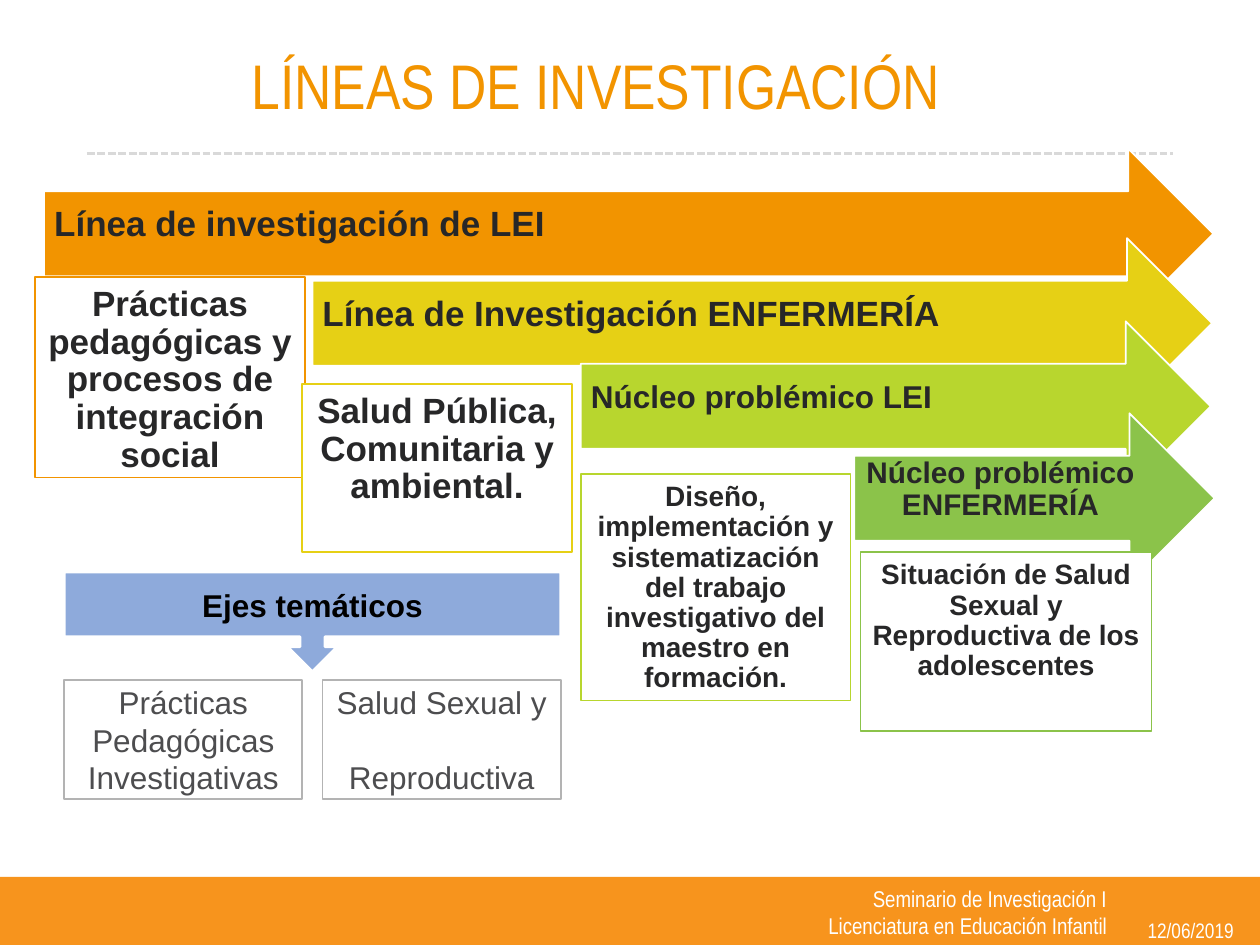
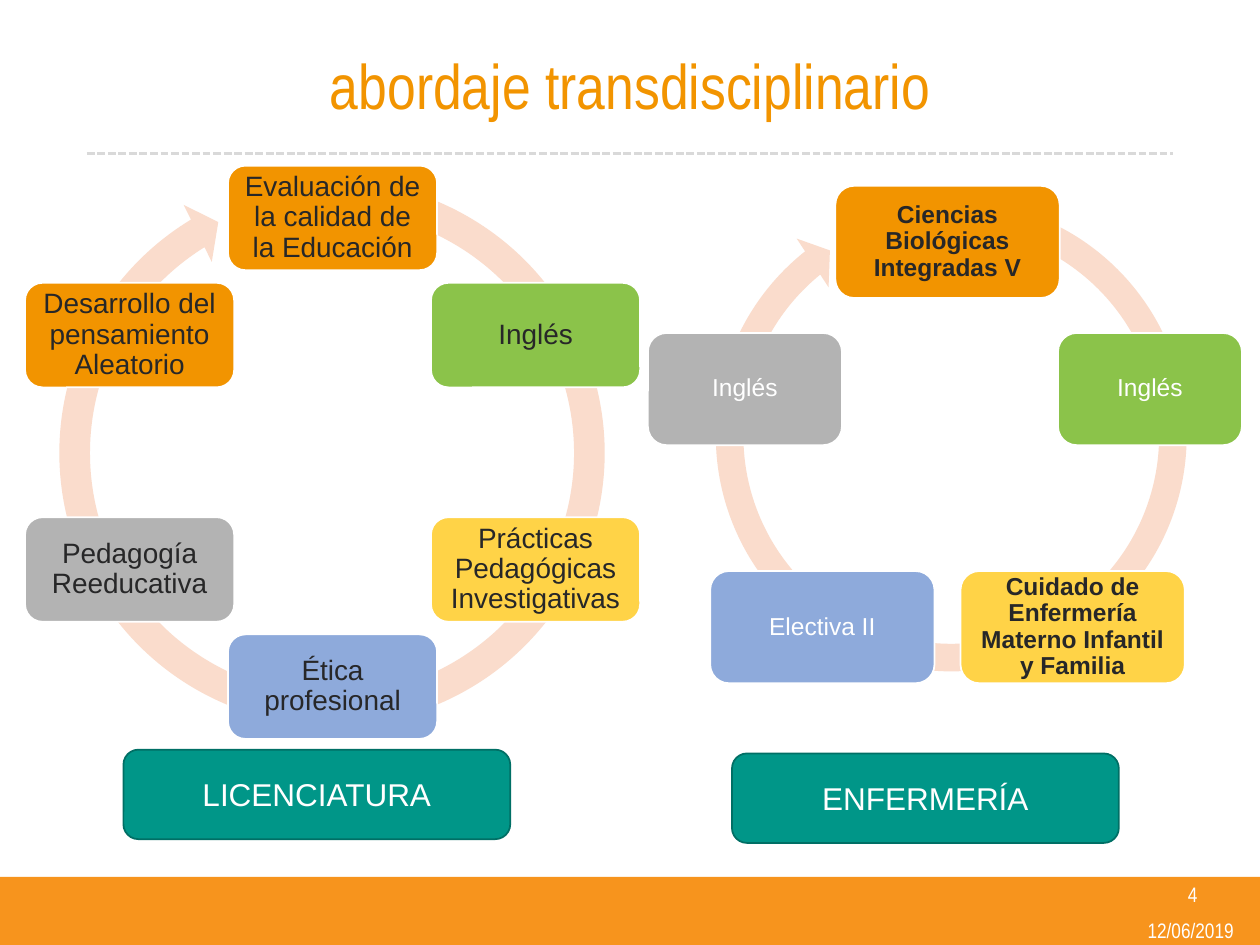
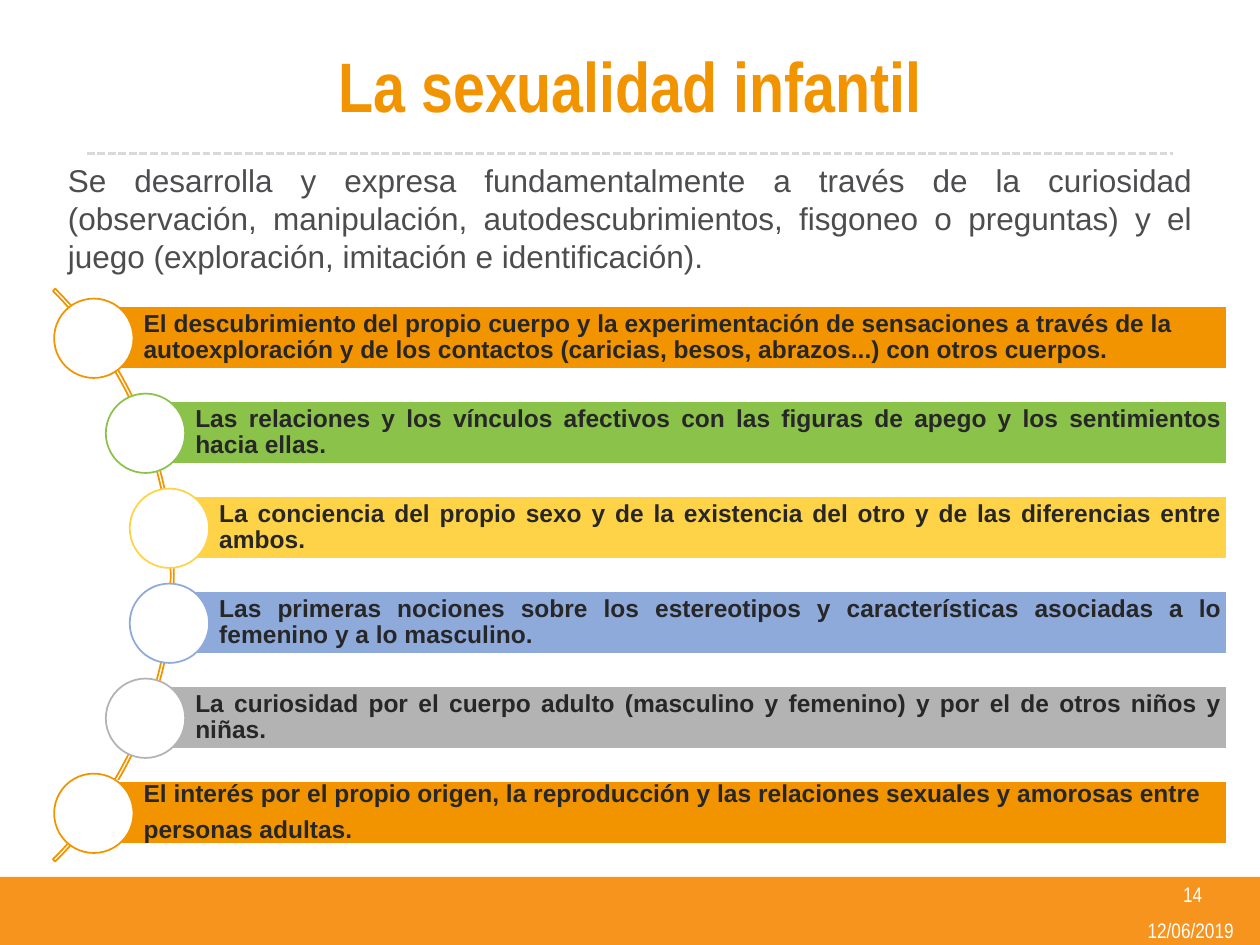
from math import cos, radians, sin

from lxml.etree import SubElement
from pptx import Presentation
from pptx.dml.color import RGBColor
from pptx.enum.dml import MSO_LINE
from pptx.enum.shapes import MSO_CONNECTOR, MSO_SHAPE
from pptx.enum.text import MSO_ANCHOR, PP_ALIGN
from pptx.oxml.ns import qn
from pptx.util import Inches, Pt

ORANGE, BAND, YELLOW, LIME = "F29400", "F7941D", "E6D015", "B8D62E"
GREEN, GOLD, BLUE, GRAY = "8BC34A", "FFD347", "8EAADB", "B3B3B3"
TEAL, DARK_TEAL, PEACH, RULE = "009688", "006F65", "FADCCC", "D9D9D9"
WHITE, BLACK, INK, BODY = "FFFFFF", "000000", "272728", "4D4D4F"
SANS, NARROW = "Arial", "Arial Narrow"
DEFAULT_INSETS = (0.1, 0.05, 0.1, 0.05)
LEFT, CENTER = PP_ALIGN.LEFT, PP_ALIGN.CENTER
RIGHT, JUSTIFY = PP_ALIGN.RIGHT, PP_ALIGN.JUSTIFY


def rgb(value):
    return RGBColor.from_string(value)


def write(shape, paragraphs, size, color, font=SANS, bold=False, align=CENTER,
          anchor=MSO_ANCHOR.MIDDLE, insets=DEFAULT_INSETS, spacing=None, gap=0):
    """Fill a shape with paragraphs; gap is the space in points between them."""
    frame = shape.text_frame
    frame.word_wrap = True
    frame.vertical_anchor = anchor
    frame.margin_left, frame.margin_top, frame.margin_right, frame.margin_bottom = map(Inches, insets)
    for index, text in enumerate(paragraphs):
        paragraph = frame.add_paragraph() if index else frame.paragraphs[0]
        paragraph.alignment = align
        if spacing:
            paragraph.line_spacing = spacing
        if index and gap:
            paragraph.space_before = Pt(gap)
        run = paragraph.add_run()
        run.text = text
        run.font.name = font
        run.font.size = Pt(size)
        run.font.bold = bold
        run.font.color.rgb = rgb(color)


def add_text(slide, box, paragraphs, size, color, **style):
    write(slide.shapes.add_textbox(*map(Inches, box)), paragraphs, size, color, **style)


def add_form(slide, preset, box, fill=None, outline=None, width=1, adjustments=()):
    form = slide.shapes.add_shape(preset, *map(Inches, box))
    form.shadow.inherit = False
    if fill:
        form.fill.solid()
        form.fill.fore_color.rgb = rgb(fill)
    else:
        form.fill.background()
    if outline:
        form.line.color.rgb = rgb(outline)
        form.line.width = Pt(width)
    else:
        form.line.fill.background()
    for index, value in enumerate(adjustments):
        form.adjustments[index] = value
    return form


def add_page(deck, title, title_center=5, title_size=36, title_bold=False, number=None):
    """Add a slide with the footer band, date, dashed rule and title."""
    slide = deck.slides.add_slide(deck.slide_layouts[6])
    add_form(slide, MSO_SHAPE.RECTANGLE, (0, 6.96, 10, 0.54), BAND)
    add_text(slide, (8.92, 7.28, 1.06, 0.21), ["12/06/2019"], 12, WHITE, font=NARROW)
    rule = slide.shapes.add_connector(MSO_CONNECTOR.STRAIGHT, Inches(0.69), Inches(1.22),
                                      Inches(9.31), Inches(1.22))
    rule.line.color.rgb = rgb(RULE)
    rule.line.width = Pt(1.5)
    rule.line.dash_style = MSO_LINE.SQUARE_DOT
    SubElement(rule._element.spPr, qn("a:effectLst"))
    if number:
        add_text(slide, (8.94, 6.95, 1.05, 0.3), [number], 12, WHITE, font=NARROW)
    add_text(slide, (title_center - 4.31, 0.13, 8.62, 1.08), [title], title_size, ORANGE,
             font=NARROW, bold=title_bold)
    return slide


def add_line_arrow(slide, left, top, width, color, text, size, align=LEFT):
    arrow = add_form(slide, MSO_SHAPE.RIGHT_ARROW, (left, top, width, 1.35), color, WHITE)
    write(arrow, [text], size, INK, bold=True, align=align,
          insets=(0.08, 0.08, 0.28, 0.21), spacing=0.9)


def add_line_detail(slide, box, color, text, size):
    detail = add_form(slide, MSO_SHAPE.RECTANGLE, box, WHITE, color)
    write(detail, [text], size, INK, bold=True, anchor=MSO_ANCHOR.TOP,
          insets=(0.07,) * 4, spacing=0.9)


def add_axis(slide, left, paragraphs, gap=0):
    axis = add_form(slide, MSO_SHAPE.RECTANGLE, (left, 5.4, 1.89, 0.94), WHITE, GRAY)
    write(axis, paragraphs, 18, BODY, gap=gap)


def add_course_ring(slide, center, radius, height, size, inset, courses):
    """Place courses clockwise from the top at equal angles."""
    for index, (name, fill, color, bold, width) in enumerate(courses):
        angle = radians(360 * index / len(courses))
        left = center[0] + radius * sin(angle) - width / 2
        top = center[1] - radius * cos(angle) - height / 2
        course = add_form(slide, MSO_SHAPE.ROUNDED_RECTANGLE, (left, top, width, height), fill, WHITE)
        write(course, [name], size, color, bold=bold, insets=(inset,) * 4, spacing=0.9)


def add_program_label(slide, left, top, name):
    label = add_form(slide, MSO_SHAPE.ROUNDED_RECTANGLE, (left, top, 3.07, 0.71), TEAL, DARK_TEAL)
    write(label, [name], 18, WHITE)


def add_trait(slide, left, top, color, paragraphs, align):
    bar = add_form(slide, MSO_SHAPE.RECTANGLE, (left, top, 9.74 - left, 0.5), color, WHITE)
    write(bar, paragraphs, 14, INK, bold=True, align=align,
          insets=(0.4, 0.04, 0.04, 0.04), spacing=0.9, gap=5)
    add_form(slide, MSO_SHAPE.OVAL, (left - 0.31, top - 0.06, 0.63, 0.63), WHITE, color)


def build_research_lines(deck):
    slide = add_page(deck, "LÍNEAS DE INVESTIGACIÓN", title_center=4.73)
    add_text(slide, (4.78, 6.97, 4.1, 0.53),
             ["Seminario de Investigación I", "Licenciatura en Educación Infantil"],
             13, WHITE, font=NARROW, align=RIGHT)

    add_line_arrow(slide, 0.35, 1.18, 9.28, ORANGE, "Línea de investigación de LEI", 20)
    add_line_detail(slide, (0.28, 2.2, 2.14, 1.59), ORANGE,
                    "Prácticas pedagógicas y procesos de integración social", 20)
    add_line_arrow(slide, 2.48, 1.89, 7.14, YELLOW, "Línea de Investigación ENFERMERÍA", 20)
    add_line_detail(slide, (2.4, 3.05, 2.14, 1.33), YELLOW,
                    "Salud Pública, Comunitaria y ambiental.", 20)
    add_line_arrow(slide, 4.61, 2.55, 5, LIME, "Núcleo problémico LEI", 18)
    add_line_detail(slide, (4.61, 3.76, 2.14, 1.8), LIME,
                    "Diseño, implementación y sistematización del trabajo "
                    "investigativo del maestro en formación.", 16)
    add_line_arrow(slide, 6.78, 3.28, 2.86, GREEN, "Núcleo problémico ENFERMERÍA", 17, CENTER)
    add_line_detail(slide, (6.83, 4.38, 2.31, 1.42), GREEN,
                    "Situación de Salud Sexual y Reproductiva de los adolescentes", 16)

    axes_heading = add_form(slide, MSO_SHAPE.DOWN_ARROW_CALLOUT, (0.51, 4.54, 3.94, 0.79),
                            BLUE, WHITE, 1.5)
    write(axes_heading, ["Ejes temáticos"], 18, BLACK, bold=True)
    add_axis(slide, 2.56, ["Salud Sexual y", "Reproductiva"], gap=21)
    add_axis(slide, 0.51, ["Prácticas Pedagógicas Investigativas"])


def build_approach(deck):
    slide = add_page(deck, "abordaje transdisciplinario", number="4")
    add_form(slide, MSO_SHAPE.CIRCULAR_ARROW, (0.34, 1.3, 4.59, 4.59), PEACH,
             adjustments=(5.3 / 100, 3.13, 143.13, 170.77, 5.5 / 100))
    teaching = [
        ("Evaluación de la calidad de la Educación", ORANGE),
        ("Inglés", GREEN),
        ("Prácticas Pedagógicas Investigativas", GOLD),
        ("Ética profesional", BLUE),
        ("Pedagogía Reeducativa", GRAY),
        ("Desarrollo del pensamiento Aleatorio", ORANGE),
    ]
    add_course_ring(slide, (2.64, 3.59), 1.86, 0.83, 16, 0.07,
                    [(name, fill, INK, False, 1.66) for name, fill in teaching])

    add_form(slide, MSO_SHAPE.CIRCULAR_ARROW, (5.56, 1.47, 3.98, 3.98), PEACH,
             adjustments=(5.5 / 100, 3.31, 138.78, 173.24, 5.8 / 100))
    add_course_ring(slide, (7.52, 3.61), 1.69, 0.89, 14, 0.06, [
        ("Ciencias Biológicas Integradas V", ORANGE, INK, True, 1.78),
        ("Inglés", GREEN, WHITE, False, 1.46),
        ("Cuidado de Enfermería Materno Infantil y Familia", GOLD, INK, True, 1.78),
        ("Electiva II", BLUE, WHITE, False, 1.78),
        ("Inglés", GRAY, WHITE, False, 1.54),
    ])
    add_program_label(slide, 0.98, 5.95, "LICENCIATURA")
    add_program_label(slide, 5.81, 5.98, "ENFERMERÍA")


def build_child_sexuality(deck):
    slide = add_page(deck, "La sexualidad infantil", title_size=40, title_bold=True, number="14")
    add_text(slide, (0.44, 1.23, 9.12, 1.01),
             ["Se desarrolla y expresa fundamentalmente a través de la curiosidad "
              "(observación, manipulación, autodescubrimientos, fisgoneo o preguntas) "
              "y el juego (exploración, imitación e identificación)."],
             18, BODY, align=JUSTIFY, anchor=MSO_ANCHOR.TOP)
    add_form(slide, MSO_SHAPE.BLOCK_ARC, (-5.05, 1.35, 6.43, 6.43), outline=ORANGE,
             adjustments=(189, 27, 0.4 / 100))
    traits = [
        (0.74, ORANGE, LEFT,
         ["El descubrimiento del propio cuerpo y la experimentación de sensaciones a través de la "
          "autoexploración y de los contactos (caricias, besos, abrazos...) con otros cuerpos."]),
        (1.15, GREEN, JUSTIFY,
         ["Las relaciones y los vínculos afectivos con las figuras de apego y los sentimientos "
          "hacia ellas."]),
        (1.34, GOLD, JUSTIFY,
         ["La conciencia del propio sexo y de la existencia del otro y de las diferencias entre "
          "ambos."]),
        (1.34, BLUE, JUSTIFY,
         ["Las primeras nociones sobre los estereotipos y características asociadas a lo "
          "femenino y a lo masculino."]),
        (1.15, GRAY, JUSTIFY,
         ["La curiosidad por el cuerpo adulto (masculino y femenino) y por el de otros niños y "
          "niñas."]),
        (0.74, ORANGE, LEFT,
         ["El interés por el propio origen, la reproducción y las relaciones sexuales y amorosas "
          "entre", "personas adultas."]),
    ]
    pitch = (6.2 - 2.43) / (len(traits) - 1)
    for row, (left, color, align, paragraphs) in enumerate(traits):
        add_trait(slide, left, 2.43 + row * pitch, color, paragraphs, align)


def main():
    deck = Presentation()
    deck.slide_width, deck.slide_height = Inches(10), Inches(7.5)
    build_research_lines(deck)
    build_approach(deck)
    build_child_sexuality(deck)
    deck.save("out.pptx")


if __name__ == "__main__":
    main()
